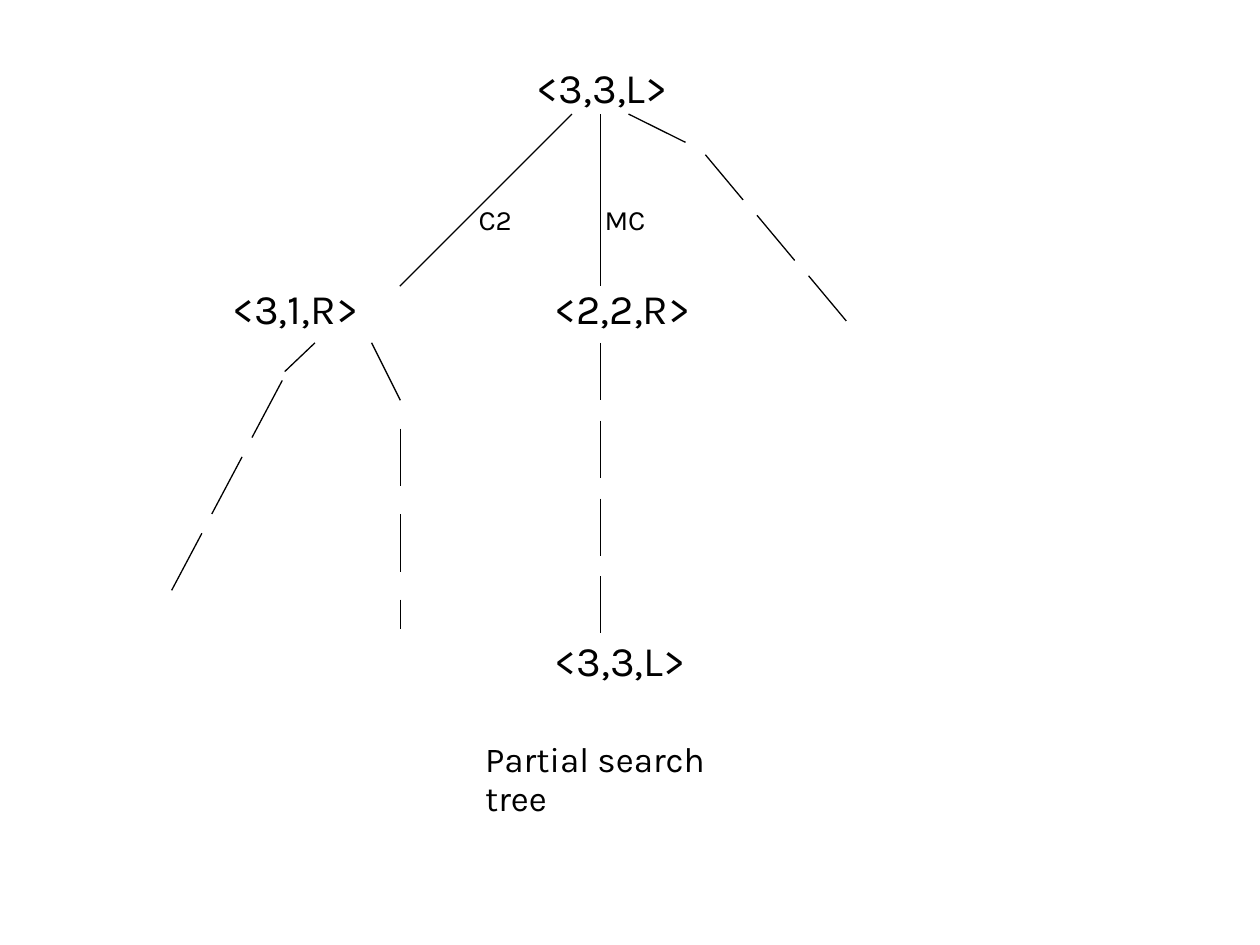
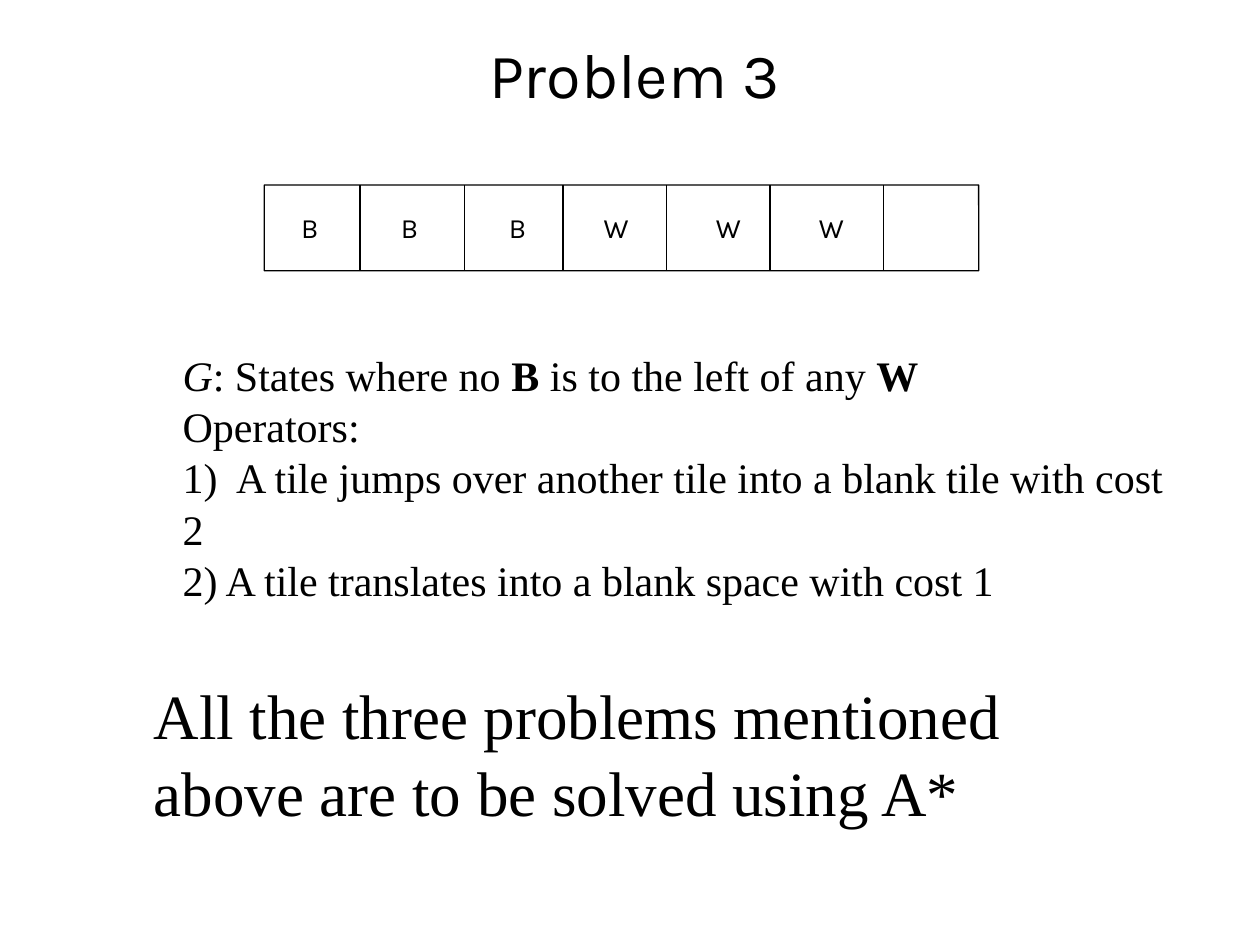
import pptx
import pptx.dml.color
import pptx.enum.shapes
import pptx.enum.text
import pptx.oxml
import pptx.util
from dataclasses import dataclass

Cm = pptx.util.Cm
Pt = pptx.util.Pt


@dataclass(frozen=True)
class Theme:
    ink: pptx.dml.color.RGBColor = pptx.dml.color.RGBColor(0, 0, 0)
    sans: str = "Karla"
    serif: str = "Times New Roman"
    label: int = 16
    caption: int = 20
    body: int = 24
    title: int = 36
    stroke: float = 0.75
    spacing: float = 1.02
    caption_spacing: float = 0.95
    inset_x: float = 0.23
    inset_y: float = 0.11


THEME = Theme()

STATES = [
    ("<3,3,L>", (10.59, 1.12, 3.45, 1.24)),
    ("<3,1,R>", (4.45, 5.56, 4.62, 1.27)),
    ("<2,2,R>", (10.95, 5.56, 4.29, 1.27)),
    ("<3,3,L>", (10.95, 12.67, 3.45, 1.24)),
]
MOVES = [("C2", (9.42, 3.96, 1.73, 0.94)), ("MC", (11.96, 3.96, 1.73, 0.94))]
CAPTION = ("Partial search tree", (9.55, 14.81, 5.56, 1.02))

EDGES = [
    ((11.53, 2.3), (8.06, 5.77)),
    ((12.1, 2.3), (12.1, 5.77)),
    ((12.67, 2.3), (13.82, 2.87)),
    ((7.49, 6.91), (8.07, 8.07)),
    ((6.35, 6.91), (5.74, 7.49)),
    ((8.07, 12.09), (8.07, 12.67)),
]
DASHED_BRANCHES = [
    {"start": (12.1, 6.91), "dash": (0, 1.15), "step": (0, 1.57), "count": 4},
    {"start": (8.07, 8.64), "dash": (0, 1.16), "step": (0, 1.73), "count": 2},
    {"start": (5.69, 7.67), "dash": (-0.61, 1.15), "step": (-0.81, 1.54), "count": 3},
    {"start": (14.22, 3.12), "dash": (0.76, 0.91), "step": (1.04, 1.22), "count": 3},
]

TITLE = ("Problem 3", (9.63, 0.58, 6.32, 1.8))
BOARD = (5.33, 3.73, 14.4, 1.73)
DIVIDERS = [7.26, 9.36, 11.35, 13.44, 15.52, 17.81]
TILES = [("B", 5.84), ("B", 7.85), ("B", 10.03), ("W", 11.94), ("W", 14.2), ("W", 16.28)]
TILE_TOP, TILE_WIDTH, TILE_HEIGHT = 4.12, 1.14, 0.94

RULES = [
    [("G", "italic"), (": States where no ", None), ("B", "bold"),
     (" is to the left of any ", None), ("W", "bold")],
    "Operators:",
    "1)  A tile jumps over another tile into a blank tile with cost 2",
    "2) A tile translates into a blank space with cost 1",
]
RULES_PLACE = (3.45, 6.91, 20.73, 5.31)
CLOSING = ("All the three problems mentioned above are to be solved using A*",
           (2.87, 13.49, 20.73, 3.35))


def add_text(page, paragraphs, place, size, font=THEME.sans, spacing=THEME.spacing, grow=True):
    box = page.shapes.add_textbox(*map(Cm, place))
    frame = box.text_frame
    frame.word_wrap = True
    frame.margin_left = frame.margin_right = Cm(THEME.inset_x)
    frame.margin_top = frame.margin_bottom = Cm(THEME.inset_y)
    fit = pptx.enum.text.MSO_AUTO_SIZE
    frame.auto_size = fit.SHAPE_TO_FIT_TEXT if grow else fit.NONE
    for index, content in enumerate(paragraphs):
        para = frame.add_paragraph() if index else frame.paragraphs[0]
        para.line_spacing = spacing
        para.font.name = font
        para.font.size = Pt(size)
        para.font.color.rgb = THEME.ink
        spans = [(content, None)] if isinstance(content, str) else content
        for text, emphasis in spans:
            span = para.add_run()
            span.text = text
            if emphasis:
                setattr(span.font, emphasis, True)


def style_line(line):
    line.color.rgb = THEME.ink
    line.width = Pt(THEME.stroke)


def add_line(page, start, end):
    connector = page.shapes.add_connector(
        pptx.enum.shapes.MSO_CONNECTOR.STRAIGHT, *map(Cm, (*start, *end)))
    style_line(connector.line)
    properties = connector._element.spPr
    properties.append(pptx.oxml.parse_xml(
        '<a:effectLst xmlns:a="http://schemas.openxmlformats.org/drawingml/2006/main"/>'))


def add_dashed_branch(page, start, dash, step, count):
    for index in range(count):
        x, y = (origin + index * shift for origin, shift in zip(start, step))
        add_line(page, (x, y), (x + dash[0], y + dash[1]))


def build_search_tree(page):
    for state, place in STATES:
        add_text(page, [state], place, THEME.body)
    for start, end in EDGES:
        add_line(page, start, end)
    for branch in DASHED_BRANCHES:
        add_dashed_branch(page, **branch)
    for move, place in MOVES:
        add_text(page, [move], place, THEME.label)
    text, place = CAPTION
    add_text(page, [text], place, THEME.caption, spacing=THEME.caption_spacing, grow=False)


def build_tile_problem(page):
    text, place = TITLE
    add_text(page, [text], place, THEME.title)
    board = page.shapes.add_shape(
        pptx.enum.shapes.MSO_SHAPE.ROUNDED_RECTANGLE, *map(Cm, BOARD))
    board.adjustments[0] = 0.002
    board.shadow.inherit = False
    board.fill.background()
    style_line(board.line)
    top, bottom = BOARD[1], BOARD[1] + BOARD[3]
    for x in DIVIDERS:
        add_line(page, (x, top), (x, bottom))
    for letter, left in TILES:
        add_text(page, [letter], (left, TILE_TOP, TILE_WIDTH, TILE_HEIGHT), THEME.label)
    add_text(page, RULES, RULES_PLACE, THEME.body, THEME.serif)
    text, place = CLOSING
    add_text(page, [text], place, THEME.title, THEME.serif)


def main():
    deck = pptx.Presentation()
    deck.slide_width, deck.slide_height = Cm(25.4), Cm(19.05)
    for build in (build_search_tree, build_tile_problem):
        build(deck.slides.add_slide(deck.slide_layouts[6]))
    deck.save("out.pptx")


if __name__ == "__main__":
    main()
